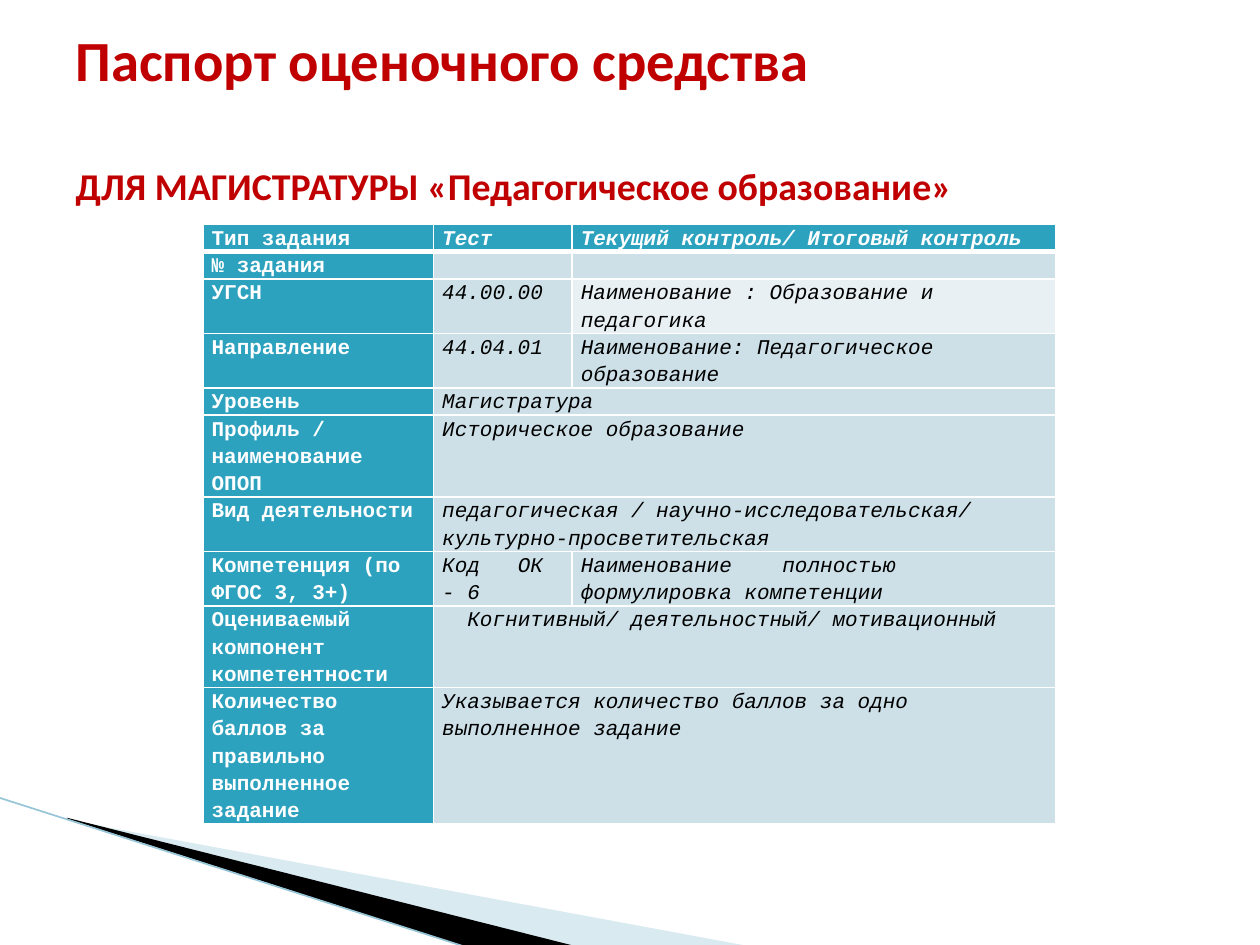
import pptx
import pptx.dml.color
import pptx.enum.dml
import pptx.enum.shapes
import pptx.enum.text
import pptx.oxml
import pptx.oxml.ns
import pptx.util
from lxml import etree

Inches = pptx.util.Inches
Pt = pptx.util.Pt
RGBColor = pptx.dml.color.RGBColor
qn = pptx.oxml.ns.qn

RED = RGBColor(0xC0, 0x00, 0x00)
TEAL = RGBColor(0x2D, 0xA2, 0xBF)
PALE = RGBColor(0xCD, 0xE0, 0xE8)
PALEST = RGBColor(0xE8, 0xF0, 0xF4)
WEDGE = RGBColor(0xA0, 0xCB, 0xDC)
EDGE = RGBColor(0x97, 0xC5, 0xD8)
BLACK = RGBColor(0, 0, 0)
WHITE = RGBColor(0xFF, 0xFF, 0xFF)

LINE_HEIGHT = 0.21
COLUMN_WIDTHS = (1.83, 1.1, 3.84)

# Lines of text in the row, then its cells; two cells mean the second spans
PASSPORT_ROWS = [
    (1, "Тип задания", "Тест", "Текущий контроль/ Итоговый контроль"),
    (1, "№ задания", "", ""),
    (2, "УГСН", "44.00.00", "Наименование : Образование и педагогика"),
    (2, "Направление", "44.04.01", "Наименование: Педагогическое образование"),
    (1, "Уровень", "Магистратура"),
    (3, "Профиль / наименование ОПОП", "Историческое образование"),
    (2, "Вид деятельности",
     "педагогическая / научно-исследовательская/ культурно-просветительская"),
    (2, "Компетенция (по ФГОС 3, 3+)", "Код\tОК - 6",
     "Наименование\tполностью формулировка компетенции"),
    (3, "Оцениваемый компонент компетентности",
     "Когнитивный/ деятельностный/ мотивационный"),
    (5, "Количество баллов за правильно выполненное задание",
     "Указывается количество баллов за одно выполненное задание"),
]
COMPETENCE_ROW, COMPONENT_ROW = 7, 8
COMPETENCE_TABS = {1: 0.6, 2: 1.6}


class SlideBuilder:
    title_font = "Calibri"
    table_font = "Courier New"
    table_size = Pt(12)

    def __init__(self, deck):
        self.slide = deck.slides.add_slide(deck.slide_layouts[5])

    def title(self, lines, left, top, width, height, gap):
        heading = self.slide.shapes.title
        heading.left, heading.top = Inches(left), Inches(top)
        heading.width, heading.height = Inches(width), Inches(height)
        frame = heading.text_frame
        frame.auto_size = pptx.enum.text.MSO_AUTO_SIZE.NONE
        frame.vertical_anchor = pptx.enum.text.MSO_ANCHOR.MIDDLE
        frame.text = "\n".join(text for text, _ in lines)
        for paragraph, (_, size) in zip(frame.paragraphs, lines):
            paragraph.alignment = pptx.enum.text.PP_ALIGN.LEFT
            font = paragraph.runs[0].font
            font.name, font.size, font.bold = self.title_font, Pt(size), True
            font.color.rgb = RED
        frame.paragraphs[0].space_before = Pt(0)
        frame.paragraphs[1].space_before = Pt(gap)

    def wedge(self, points, color, opacity=None):
        corners = [(Inches(x), Inches(y)) for x, y in points]
        outline = self.slide.shapes.build_freeform(*corners[0])
        outline.add_line_segments(corners[1:], close=True)
        shape = outline.convert_to_shape()
        shape.shadow.inherit = False
        shape.line.fill.background()
        shape.fill.solid()
        shape.fill.fore_color.rgb = color
        if opacity is not None:
            tint = shape.fill._xPr.find(".//" + qn("a:srgbClr"))
            etree.SubElement(tint, qn("a:alpha"), val=str(opacity * 1000))

    def line(self, start, end, color, width):
        rule = self.slide.shapes.add_connector(
            pptx.enum.shapes.MSO_CONNECTOR.STRAIGHT,
            *(Inches(value) for value in start + end))
        rule.line.color.rgb = color
        rule.line.width = Pt(width)
        etree.SubElement(rule._element.spPr, qn("a:effectLst"))

    def table(self, rows, widths, left, top):
        height = LINE_HEIGHT * sum(row[0] for row in rows)
        grid = self.slide.shapes.add_table(
            len(rows), len(widths), Inches(left), Inches(top),
            Inches(sum(widths)), Inches(height)).table
        for column, width in zip(grid.columns, widths):
            column.width = Inches(width)
        for r, (line_count, *texts) in enumerate(rows):
            grid.rows[r].height = Inches(LINE_HEIGHT * line_count)
            if len(texts) == 2:
                grid.cell(r, 1).merge(grid.cell(r, 2))
            for c in range(len(widths)):
                text = texts[c] if c < len(texts) else ""
                self.cell(grid.cell(r, c), text, r, c)
        return grid

    def cell(self, cell, text, row, column):
        header = row == 0 or column == 0
        cell.margin_left = cell.margin_right = Inches(0.07)
        cell.margin_top = cell.margin_bottom = 0
        self.borders(cell, {"T": 3 if row == 1 else 1, "B": 3 if row == 0 else 1})
        cell.fill.solid()
        cell.fill.fore_color.rgb = TEAL if header else PALE
        cell.text_frame.text = text
        paragraph = cell.text_frame.paragraphs[0]
        paragraph.line_spacing = 1.15
        for run in paragraph.runs:
            font = run.font
            font.name, font.size = self.table_font, self.table_size
            font.bold, font.italic = header, column > 0
            font.color.rgb = WHITE if header else BLACK
        if not text:
            # An empty cell keeps the row height of the table's text size
            etree.SubElement(paragraph._p, qn("a:endParaRPr"),
                             sz=str(int(self.table_size.pt * 100)))

    def borders(self, cell, widths):
        properties = cell._tc.get_or_add_tcPr()
        for side in "LRTB":
            edge = etree.SubElement(properties, qn("a:ln" + side),
                                    w=str(Pt(widths.get(side, 1))))
            fill = etree.SubElement(edge, qn("a:solidFill"))
            etree.SubElement(fill, qn("a:srgbClr"), val=str(WHITE))

    def tab_stop(self, cell, position):
        properties = cell.text_frame.paragraphs[0]._p.get_or_add_pPr()
        stops = etree.SubElement(properties, qn("a:tabLst"))
        etree.SubElement(stops, qn("a:tab"), pos=str(Inches(position)), algn="l")

    def indent(self, cell, distance):
        properties = cell.text_frame.paragraphs[0]._p.get_or_add_pPr()
        properties.set("marL", str(Inches(distance)))
        properties.set("indent", "0")


def main():
    deck = pptx.Presentation()
    deck.slide_width, deck.slide_height = Inches(10), Inches(7.5)
    builder = SlideBuilder(deck)

    # Corner decoration
    builder.wedge([(0.55, 6.51), (5.95, 7.51), (4.56, 7.51), (0.55, 6.5)], WEDGE, 40)
    builder.wedge([(0.53, 6.49), (4.57, 7.51), (3.72, 7.52), (0.54, 6.5)], BLACK)
    builder.line((-0.01, 6.33), (3.71, 7.52), EDGE, 0.95)

    # Passport table
    passport = builder.table(PASSPORT_ROWS, COLUMN_WIDTHS, 1.61, 1.78)
    passport.cell(2, 2).fill.fore_color.rgb = PALEST
    for column, position in COMPETENCE_TABS.items():
        builder.tab_stop(passport.cell(COMPETENCE_ROW, column), position)
    builder.indent(passport.cell(COMPONENT_ROW, 1), 0.2)

    # Title
    builder.title([("Паспорт оценочного средства", 32.4),
                   ("ДЛЯ МАГИСТРАТУРЫ «Педагогическое образование»", 21.6)],
                  0.5, 0.3, 9, 1.25, gap=39.5)

    deck.save("out.pptx")


if __name__ == "__main__":
    main()
